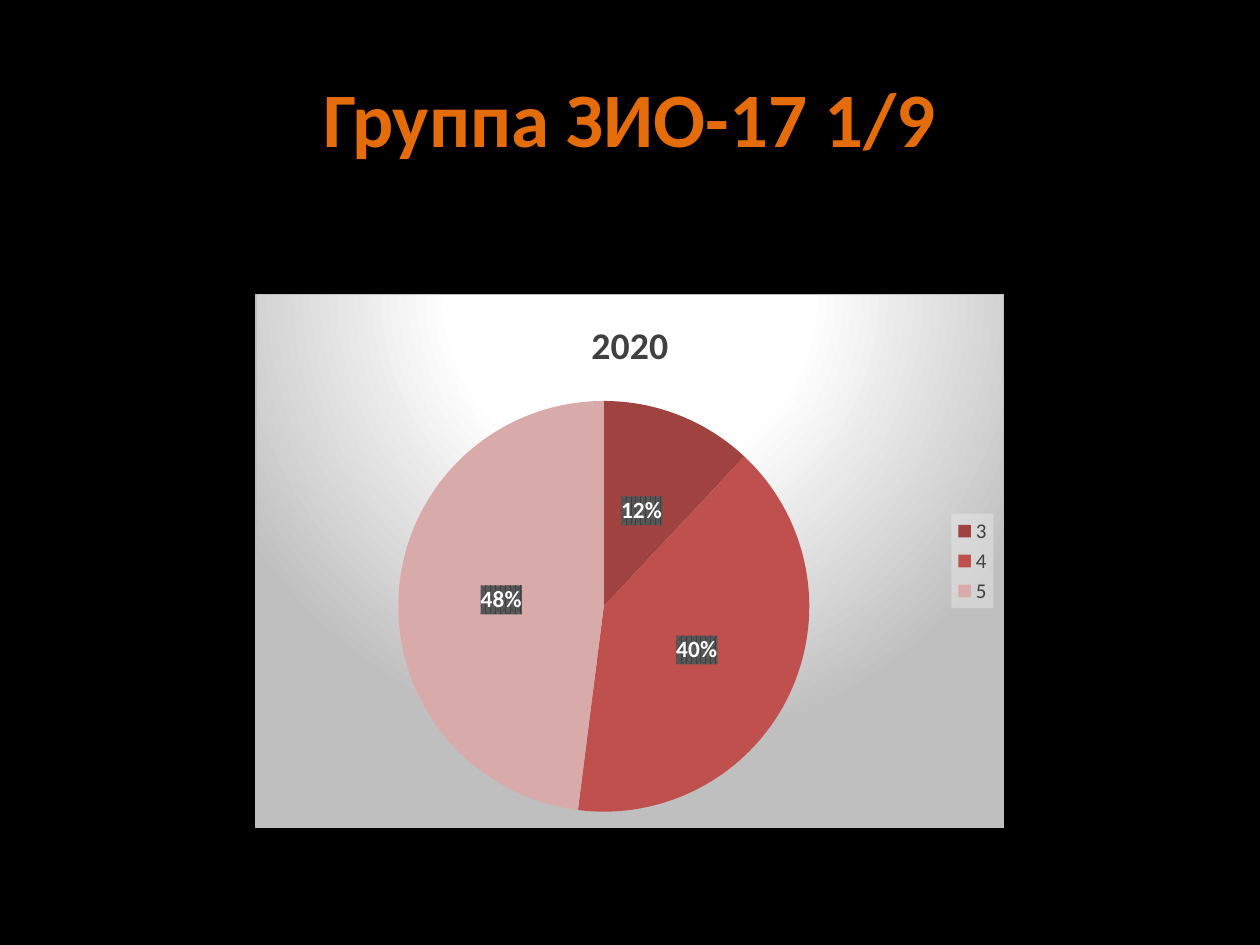
from lxml.etree import SubElement
from pptx import Presentation
from pptx.chart.data import CategoryChartData
from pptx.dml.color import RGBColor
from pptx.enum.chart import XL_CHART_TYPE, XL_LABEL_POSITION, XL_LEGEND_POSITION
from pptx.enum.text import MSO_ANCHOR, PP_ALIGN
from pptx.oxml import parse_xml
from pptx.oxml.ns import nsdecls, qn
from pptx.util import Cm, Pt

COLORS = {
    "background": "000000",
    "heading": "E46C0A",
    "dark_text": "404040",
    "light_text": "FFFFFF",
    "panel_light": "FFFFFF",
    "panel_dark": "BFBFBF",
    "legend": "F2F2F2",
    "label_front": "404040",
    "label_back": "595959",
}
SLICE_COLORS = {"3": "9F4240", "4": "C0504D", "5": "D9AAAA"}
SERIES = {
    "Series 1": (12, 40, 48),
    "Series 2": (None, None, None),
    "Series 3": (None, None, None),
}
FORMATS = {
    "heading": {"size": Pt(44), "bold": True},
    "chart": {"size": Pt(10)},
    "chart_title": {"size": Pt(21.6), "bold": True},
    "legend": {"size": Pt(12), "bold": False},
    "label": {"size": Pt(13.3), "bold": True},
}
PIE_LAYOUT = {"x": 0.19, "y": 0.2, "w": 0.55, "h": 0.77}


def rgb(name):
    return RGBColor.from_string(COLORS[name])


def format_font(font, style, color):
    for attribute, value in {"name": "Calibri", **FORMATS[style]}.items():
        setattr(font, attribute, value)
    font.color.rgb = rgb(color)


def color_xml(name, inner=""):
    return f'<a:srgbClr val="{COLORS[name]}">{inner}</a:srgbClr>'


def add_backdrop(parent, fill_xml):
    """Give a chart part a fill; its text properties must already exist."""
    properties = parse_xml(f'<c:spPr {nsdecls("c", "a")}>{fill_xml}</c:spPr>')
    parent.find(qn("c:txPr")).addprevious(properties)


def add_heading(slide, text):
    box = slide.shapes.add_textbox(Cm(1.27), Cm(0.76), Cm(22.86), Cm(3.18))
    frame = box.text_frame
    frame.word_wrap = True
    frame.vertical_anchor = MSO_ANCHOR.MIDDLE
    paragraph = frame.paragraphs[0]
    paragraph.text = text
    paragraph.alignment = PP_ALIGN.CENTER
    format_font(paragraph.font, "heading", "heading")


def style_panel(chart):
    format_font(chart.font, "chart", "light_text")
    stops = ((0, "panel_light"), (39, "panel_light"), (100, "panel_dark"))
    stops_xml = "".join(
        f'<a:gs pos="{percent * 1000}">{color_xml(name)}</a:gs>' for percent, name in stops
    )
    add_backdrop(
        chart.element,
        f'<a:gradFill><a:gsLst>{stops_xml}</a:gsLst><a:path path="circle">'
        '<a:fillToRect l="50000" t="-80000" r="50000" b="180000"/></a:path></a:gradFill>'
        f'<a:ln w="9525"><a:solidFill>{color_xml("panel_dark")}</a:solidFill></a:ln>',
    )


def style_title(chart, text):
    frame = chart.chart_title.text_frame
    frame.text = text
    format_font(frame.paragraphs[0].runs[0].font, "chart_title", "dark_text")
    chart.chart_title.include_in_layout = False


def style_legend(chart):
    chart.has_legend = True
    legend = chart.legend
    legend.position = XL_LEGEND_POSITION.RIGHT
    legend.include_in_layout = False
    format_font(legend.font, "legend", "dark_text")
    fill = color_xml("legend", '<a:alpha val="39000"/>')
    add_backdrop(
        chart.element.find(".//" + qn("c:legend")), f"<a:solidFill>{fill}</a:solidFill>"
    )


def style_slices(plot):
    plot.vary_by_categories = True
    for index, color in enumerate(SLICE_COLORS.values()):
        fill = plot.series[0].points[index].format.fill
        fill.solid()
        fill.fore_color.rgb = RGBColor.from_string(color)


def style_labels(chart):
    labels = chart.plots[0].series[0].data_labels
    settings = {
        "show_percentage": True,
        "show_value": False,
        "number_format": "0%",
        "number_format_is_linked": False,
        "position": XL_LABEL_POSITION.CENTER,
    }
    for attribute, value in settings.items():
        setattr(labels, attribute, value)
    format_font(labels.font, "label", "light_text")
    add_backdrop(
        chart.element.find(".//" + qn("c:ser") + "/" + qn("c:dLbls")),
        f'<a:pattFill prst="pct75"><a:fgClr>{color_xml("label_front")}</a:fgClr>'
        f'<a:bgClr>{color_xml("label_back")}</a:bgClr></a:pattFill>',
    )


def place_pie(chart):
    plot_area = chart.element.find(".//" + qn("c:plotArea"))
    layout = plot_area.find(qn("c:layout"))
    if layout is None:
        layout = parse_xml(f'<c:layout {nsdecls("c")}/>')
        plot_area.insert(0, layout)
    manual = SubElement(layout, qn("c:manualLayout"))
    modes = {"layoutTarget": "inner", "xMode": "edge", "yMode": "edge"}
    for tag, value in {**modes, **PIE_LAYOUT}.items():
        SubElement(manual, qn(f"c:{tag}")).set("val", str(value))


def add_grade_pie(slide, title):
    data = CategoryChartData()
    data.categories = list(SLICE_COLORS)
    for name, values in SERIES.items():
        data.add_series(name, values)
    chart = slide.shapes.add_chart(
        XL_CHART_TYPE.PIE, Cm(5.15), Cm(5.92), Cm(15.1), Cm(10.78), data
    ).chart
    style_panel(chart)
    style_title(chart, title)
    style_legend(chart)
    style_slices(chart.plots[0])
    style_labels(chart)
    place_pie(chart)
    # A new pie holds only its first series; this adds the others in the same style.
    chart.replace_data(data)


def main():
    presentation = Presentation()
    presentation.slide_width, presentation.slide_height = Cm(25.4), Cm(19.05)
    slide = presentation.slides.add_slide(presentation.slide_layouts[6])
    slide.background.fill.solid()
    slide.background.fill.fore_color.rgb = rgb("background")
    add_heading(slide, "Группа ЗИО-17 1/9")
    add_grade_pie(slide, "2020")
    presentation.save("out.pptx")


if __name__ == "__main__":
    main()
